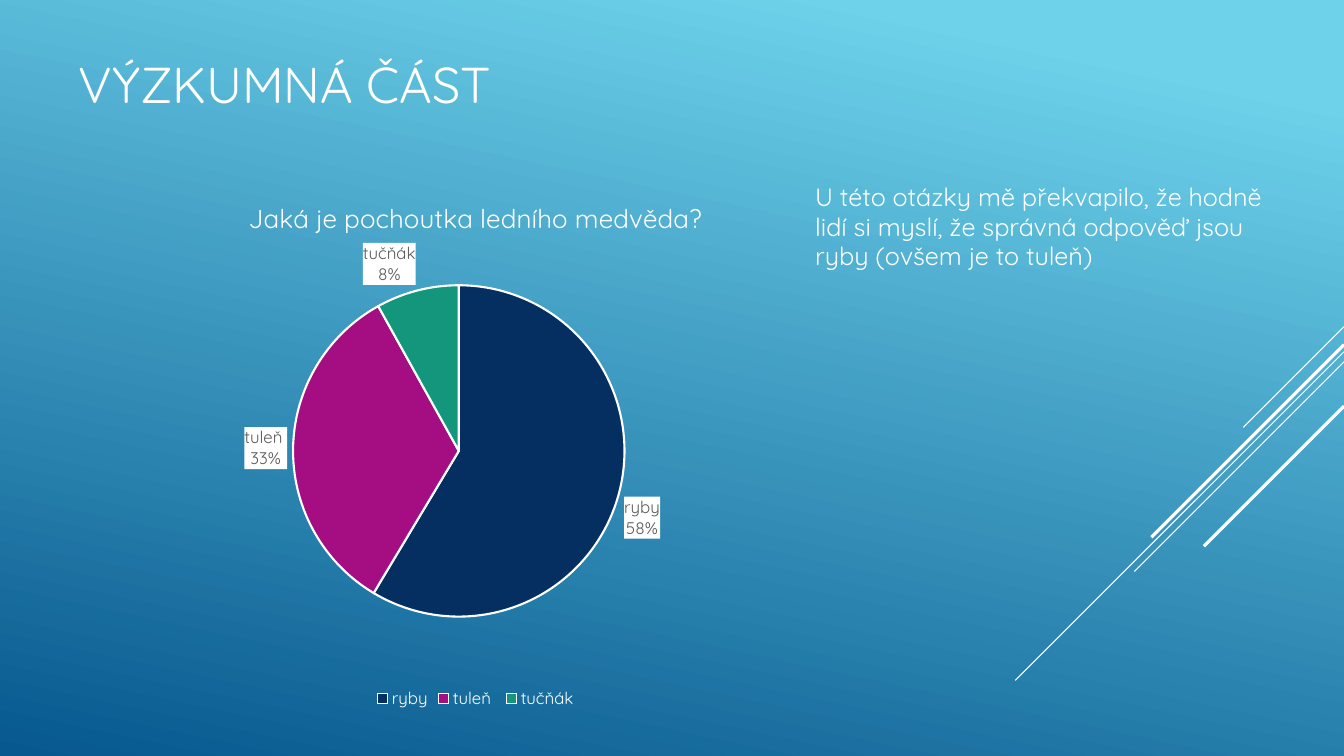
from lxml.etree import SubElement
from pptx import Presentation
from pptx.chart.data import CategoryChartData
from pptx.dml.color import RGBColor
from pptx.enum.chart import XL_CHART_TYPE, XL_LABEL_POSITION, XL_LEGEND_POSITION
from pptx.enum.shapes import MSO_CONNECTOR
from pptx.enum.text import MSO_ANCHOR, MSO_AUTO_SIZE, PP_ALIGN
from pptx.oxml import parse_xml
from pptx.oxml.ns import nsdecls, qn
from pptx.util import Inches, Pt

WIDTH, HEIGHT = 13.33, 7.5
FONT = "Quicksand"
WHITE = "FFFFFF"
SLICES = [("ryby", 58, "052F61"), ("tuleň ", 33, "A50E82"), ("tučňák", 8, "14967C")]
STREAKS = [(3.24, 1.0, 0.75), (3.49, 3.26, 0.75), (3.59, 2.08, 0.75),
           (3.42, 1.91, 2.25), (4.03, 1.39, 2.25)]


def color(value):
    return RGBColor.from_string(value)


def style_font(font, size, tint=WHITE):
    font.name, font.size, font.bold = FONT, Pt(size), False
    font.color.rgb = color(tint)


def write(frame, text, size, tint=WHITE, anchor=None, spacing=None):
    paragraph = frame.paragraphs[0]
    run = paragraph.add_run()
    run.text = text
    style_font(run.font, size, tint)
    if anchor is not None:
        frame.word_wrap = True
        frame.auto_size = MSO_AUTO_SIZE.NONE
        frame.vertical_anchor = anchor
        paragraph.alignment = PP_ALIGN.LEFT
        paragraph.space_before = Pt(0)
        paragraph.line_spacing = spacing
    return paragraph


def place(shape, left, top, width, height):
    shape.left, shape.top = Inches(left * WIDTH), Inches(top * HEIGHT)
    shape.width, shape.height = Inches(width * WIDTH), Inches(height * HEIGHT)


def paint_background(slide):
    fill = slide.background.fill
    fill.gradient()
    fill.gradient_angle = 258
    for stop, position, tint in zip(fill.gradient_stops, (0.1, 1), ("6ED2EB", "06588E")):
        stop.position = position
        stop.color.rgb = color(tint)


def add_streak(slide, top, reach, weight):
    streak = slide.shapes.add_connector(
        MSO_CONNECTOR.STRAIGHT, Inches(WIDTH), Inches(top),
        Inches(WIDTH - reach), Inches(top + reach))
    streak.line.color.rgb = color(WHITE)
    streak.line.width = Pt(weight)
    SubElement(streak._element.spPr, qn("a:effectLst"))


def set_plot_area(chart, **area):
    plot_area = chart._chartSpace.chart.plotArea
    for layout in plot_area.findall(qn("c:layout")):
        plot_area.remove(layout)
    sizes = "".join(f'<c:{key} val="{share}"/>' for key, share in area.items())
    plot_area.insert(0, parse_xml(
        f'<c:layout {nsdecls("c")}><c:manualLayout><c:layoutTarget val="inner"/>'
        f'<c:xMode val="edge"/><c:yMode val="edge"/>{sizes}</c:manualLayout></c:layout>'))


def label_slices(plot):
    plot.has_data_labels = True
    labels = plot.data_labels
    style_font(labels.font, 12, "595959")
    labels.show_category_name = labels.show_value = True
    labels.number_format, labels.number_format_is_linked = '0"%"', False
    labels.position = XL_LABEL_POSITION.OUTSIDE_END
    element = labels._element
    element.find(qn("c:txPr")).addprevious(parse_xml(
        f'<c:spPr {nsdecls("c", "a")}><a:solidFill><a:srgbClr val="{WHITE}"/>'
        '</a:solidFill></c:spPr>'))
    separator = parse_xml(f'<c:separator {nsdecls("c")}>\n</c:separator>')
    element.find(qn("c:showBubbleSize")).addnext(separator)


def add_pie(slide, question, left, top, width, height):
    answers = CategoryChartData()
    answers.categories = [name for name, _, _ in SLICES]
    answers.add_series("Series 1", [share for _, share, _ in SLICES])
    frame = slide.shapes.add_chart(XL_CHART_TYPE.PIE, 0, 0, 1, 1, answers)
    place(frame, left, top, width, height)
    chart = frame.chart
    style_font(chart.font, 10)
    chart.has_title = True
    write(chart.chart_title.text_frame, question, 18.6)
    chart.has_legend = True
    chart.legend.position = XL_LEGEND_POSITION.BOTTOM
    chart.legend.include_in_layout = False
    style_font(chart.legend.font, 12)
    plot = chart.plots[0]
    plot.vary_by_categories = True
    for index, (_, _, tint) in enumerate(SLICES):
        piece = plot.series[0].points[index].format
        piece.fill.solid()
        piece.fill.fore_color.rgb = color(tint)
        piece.line.color.rgb = color(WHITE)
        piece.line.width = Pt(1.5)
    label_slices(plot)
    set_plot_area(chart, x=0.28, y=0.2, w=0.4, h=0.62)


def main():
    deck = Presentation()
    deck.slide_width, deck.slide_height = Inches(WIDTH), Inches(HEIGHT)
    slide = deck.slides.add_slide(deck.slide_layouts[1])
    paint_background(slide)
    for streak in STREAKS:
        add_streak(slide, *streak)

    heading = slide.shapes.title
    place(heading, 0.051, 0, 0.434, 0.22)
    write(heading.text_frame, "VÝZKUMNÁ ČÁST", 36, anchor=MSO_ANCHOR.MIDDLE)

    add_pie(slide, "Jaká je pochoutka ledního medvěda?", 0.039, 0.236, 0.63, 0.707)

    comment = slide.placeholders[1]
    place(comment, 0.599, 0.236, 0.348, 0.175)
    paragraph = write(
        comment.text_frame,
        "U této otázky mě překvapilo, že hodně lidí si myslí, "
        "že správná odpověď jsou ryby (ovšem je to tuleň)",
        18, anchor=MSO_ANCHOR.TOP, spacing=0.97)
    properties = paragraph._p.get_or_add_pPr()
    properties.set("marL", "0")
    properties.set("indent", "0")
    SubElement(properties, qn("a:buNone"))

    deck.save("out.pptx")


if __name__ == "__main__":
    main()
